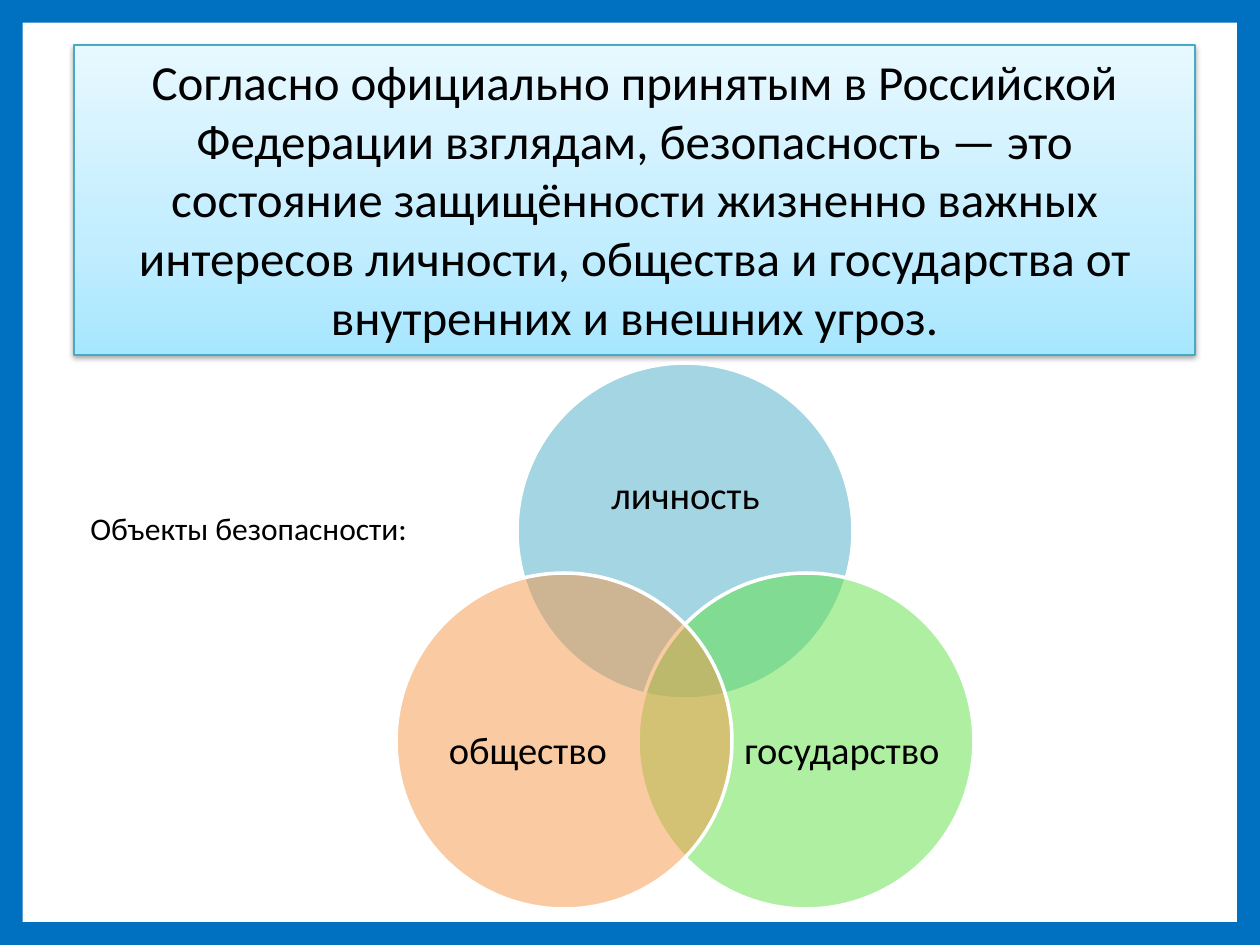
"""Build a slide that defines security and shows its three objects as a Venn diagram."""
import copy
from dataclasses import dataclass

import lxml.etree
import pptx
import pptx.dml.color
import pptx.enum.shapes
import pptx.enum.text
import pptx.oxml.ns
import pptx.shapes.autoshape
import pptx.text.text
import pptx.util

EMU_PER_PX = 914400 / 126
CIRCLE_SIZE = 336
FONT = "Calibri"
COLORS = {
    "frame": "0070C0",
    "banner_line": "46AAC5",
    "text": "000000",
    "outline": "FFFFFF",
    "person": "4BACC6",
    "state": "60E146",
    "society": "F79646",
}
BANNER_STOPS = ((0, "A7E6FF"), (0.35, "C1EDFF"), (1, "E7F8FF"))
DEFINITION = (
    "Согласно официально принятым в Российской Федерации взглядам, безопасность — это "
    "состояние защищённости жизненно важных интересов личности, общества и государства "
    "от внутренних и внешних угроз."
)
SHAPE = pptx.enum.shapes.MSO_SHAPE
ALIGN = pptx.enum.text.PP_ALIGN
ANCHOR = pptx.enum.text.MSO_ANCHOR
AUTO_SIZE = pptx.enum.text.MSO_AUTO_SIZE


@dataclass(frozen=True)
class Box:
    left: int
    top: int
    width: int
    height: int

    def emu(self) -> list[int]:
        return [px(n) for n in (self.left, self.top, self.width, self.height)]


@dataclass(frozen=True)
class SecurityObject:
    name: str
    color: str
    left: int
    top: int
    label: Box


SECURITY_OBJECTS = (
    SecurityObject("личность", "person", 517, 363, Box(562, 422, 247, 151)),
    SecurityObject("государство", "state", 638, 573, Box(741, 660, 202, 185)),
    SecurityObject("общество", "society", 396, 573, Box(427, 660, 202, 185)),
)


def px(length: int) -> int:
    return round(length * EMU_PER_PX)


def rgb(value: str) -> pptx.dml.color.RGBColor:
    return pptx.dml.color.RGBColor.from_string(value)


def add_child(parent, tag: str, **attributes: str):
    return lxml.etree.SubElement(parent, pptx.oxml.ns.qn(tag), attributes)


def add_plain_shape(shapes, kind, box: Box) -> pptx.shapes.autoshape.Shape:
    shape = shapes.add_shape(kind, *box.emu())
    shape.shadow.inherit = False
    return shape


def write(frame: pptx.text.text.TextFrame, text: str, size: int, align) -> None:
    paragraph = frame.paragraphs[0]
    paragraph.text = text
    paragraph.alignment = align
    paragraph.font.size = pptx.util.Pt(size)
    paragraph.font.name = FONT
    paragraph.font.color.rgb = rgb(COLORS["text"])


def draw_frame(shapes) -> None:
    frame = add_plain_shape(shapes, SHAPE.FRAME, Box(0, 0, 1260, 945))
    frame.adjustments[0] = 0.024
    frame.fill.solid()
    frame.fill.fore_color.rgb = rgb(COLORS["frame"])
    frame.line.fill.background()


def draw_banner(shapes) -> None:
    banner = add_plain_shape(shapes, SHAPE.RECTANGLE, Box(74, 45, 1121, 310))
    banner.fill.gradient()
    banner.fill.gradient_angle = 90
    properties = banner.element.spPr
    stop_list = properties.find(".//" + pptx.oxml.ns.qn("a:gsLst"))
    stop_list.append(copy.deepcopy(stop_list[0]))
    for stop, (position, color) in zip(banner.fill.gradient_stops, BANNER_STOPS):
        stop.position = position
        stop.color.rgb = rgb(color)
    banner.line.color.rgb = rgb(COLORS["banner_line"])
    banner.line.width = pptx.util.Pt(0.75)

    effects = properties.find(pptx.oxml.ns.qn("a:effectLst"))
    shadow = add_child(effects, "a:outerShdw", blurRad="40000", dist="20000",
                       dir="5400000", rotWithShape="0")
    shade = add_child(shadow, "a:srgbClr", val=COLORS["text"])
    add_child(shade, "a:alpha", val="38000")

    banner.text_frame.word_wrap = True
    banner.text_frame.auto_size = AUTO_SIZE.SHAPE_TO_FIT_TEXT
    banner.text_frame.vertical_anchor = ANCHOR.TOP
    write(banner.text_frame, DEFINITION, 28, ALIGN.CENTER)


def draw_security_object(shapes, item: SecurityObject) -> None:
    circle = add_plain_shape(
        shapes, SHAPE.OVAL, Box(item.left, item.top, CIRCLE_SIZE, CIRCLE_SIZE))
    circle.fill.solid()
    circle.fill.fore_color.rgb = rgb(COLORS[item.color])
    tint = circle.element.spPr.find(".//" + pptx.oxml.ns.qn("a:srgbClr"))
    add_child(tint, "a:alpha", val="50000")
    circle.line.color.rgb = rgb(COLORS["outline"])
    circle.line.width = pptx.util.Pt(2)

    label = shapes.add_textbox(*item.label.emu()).text_frame
    label.word_wrap = True
    label.vertical_anchor = ANCHOR.MIDDLE
    label.margin_left = label.margin_right = label.margin_top = label.margin_bottom = 0
    write(label, item.name, 22, ALIGN.CENTER)
    label.paragraphs[0].line_spacing = 0.9


def draw_caption(shapes) -> None:
    caption = shapes.add_textbox(*Box(78, 503, 346, 50).emu()).text_frame
    caption.word_wrap = False
    caption.auto_size = AUTO_SIZE.SHAPE_TO_FIT_TEXT
    write(caption, "Объекты безопасности:", 18, ALIGN.LEFT)


def main() -> None:
    deck = pptx.Presentation()
    deck.slide_width, deck.slide_height = px(1260), px(945)
    shapes = deck.slides.add_slide(deck.slide_layouts[6]).shapes
    draw_frame(shapes)
    draw_banner(shapes)
    venn = shapes.add_group_shape()
    for item in SECURITY_OBJECTS:
        draw_security_object(venn.shapes, item)
    draw_caption(shapes)
    deck.save("out.pptx")


if __name__ == "__main__":
    main()
